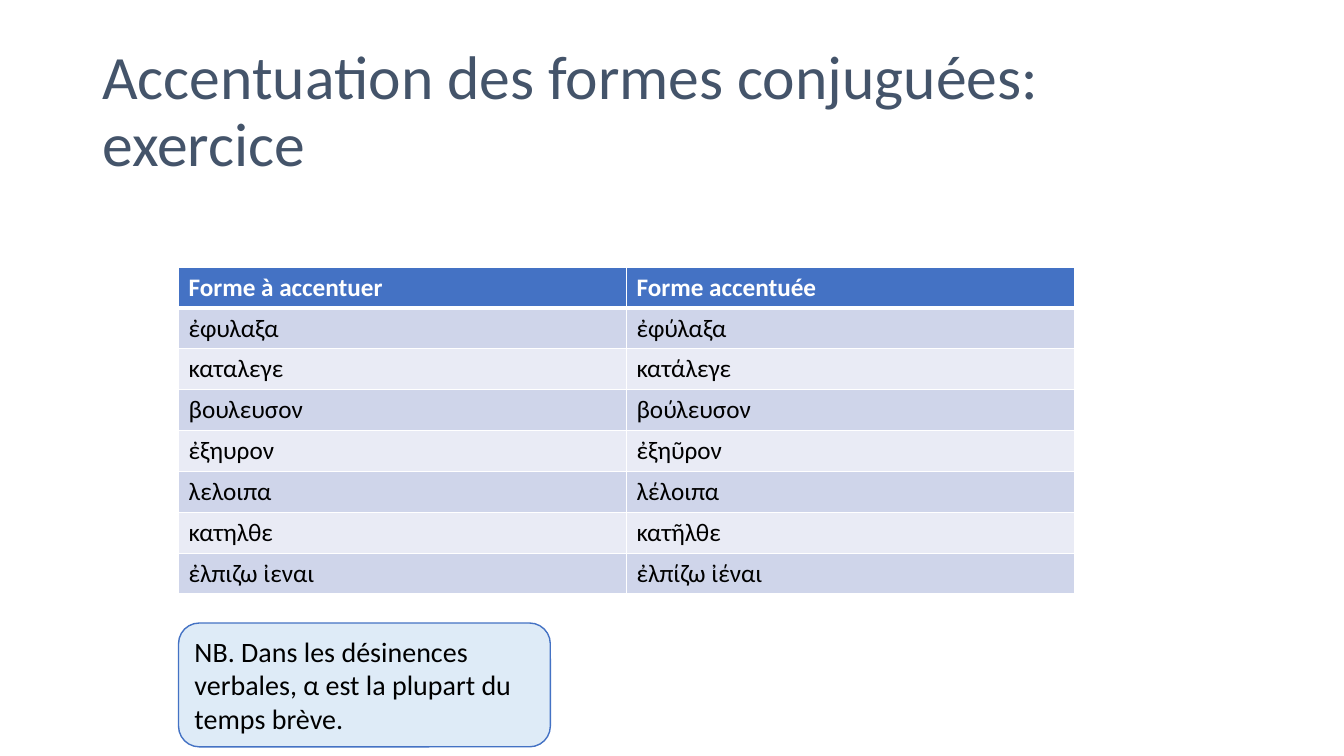
from lxml import etree
from pptx import Presentation
from pptx.dml.color import RGBColor
from pptx.enum import shapes, text
from pptx.oxml import ns
from pptx.util import Cm, Pt

FONT = "Calibri"
BLUE = "4472C4"
WHITE = "FFFFFF"
BLACK = "000000"
BANDS = ("CFD5EA", "E9EBF5")
TABLE_LEFT = Cm(4.5)

FORMS = [
    ("Forme à accentuer", "Forme accentuée"),
    ("ἐφυλαξα", "ἐφύλαξα"),
    ("καταλεγε", "κατάλεγε"),
    ("βουλευσον", "βούλευσον"),
    ("ἐξηυρον", "ἐξηῦρον"),
    ("λελοιπα", "λέλοιπα"),
    ("κατηλθε", "κατῆλθε"),
    ("ἐλπιζω ἰεναι", "ἐλπίζω ἰέναι"),
]


def rgb(color):
    return RGBColor.from_string(color)


def add_run(p, words, size, color, bold=False):
    r = p.add_run()
    r.text = words
    r.font.name = FONT
    r.font.size = Pt(size)
    r.font.bold = bold
    r.font.color.rgb = rgb(color)


def set_border(cell, side, width):
    tc_pr = cell._tc.get_or_add_tcPr()
    ln = etree.SubElement(tc_pr, ns.qn(f"a:ln{side}"), w=str(Pt(width)))
    fill = etree.SubElement(ln, ns.qn("a:solidFill"))
    etree.SubElement(fill, ns.qn("a:srgbClr"), val=WHITE)


def add_title(s, words):
    sp = s.shapes.add_textbox(Cm(2.33), Cm(1.01), Cm(29.21), Cm(3.68))
    tf = sp.text_frame
    tf.word_wrap = True
    tf.vertical_anchor = text.MSO_ANCHOR.MIDDLE
    p = tf.paragraphs[0]
    p.line_spacing = 0.9
    add_run(p, words, 44, "44546A")


def add_forms_table(s, rows):
    row_height = Cm(1.03)
    table = s.shapes.add_table(len(rows), 2, TABLE_LEFT, Cm(6.73),
                               Cm(22.58), row_height * len(rows)).table
    for i, row in enumerate(rows):
        table.rows[i].height = row_height
        header = i == 0
        for j, words in enumerate(row):
            cell = table.cell(i, j)
            set_border(cell, "L", 1)
            set_border(cell, "R", 1)
            set_border(cell, "T", 3 if i == 1 else 1)
            set_border(cell, "B", 3 if header else 1)
            cell.fill.solid()
            cell.fill.fore_color.rgb = rgb(BLUE if header else BANDS[(i - 1) % 2])
            add_run(cell.text_frame.paragraphs[0], words, 18,
                    WHITE if header else BLACK, header)


def add_note(s, words):
    sp = s.shapes.add_shape(shapes.MSO_SHAPE.ROUNDED_RECTANGLE,
                            TABLE_LEFT, Cm(15.7), Cm(9.37), Cm(3.12))
    sp.shadow.inherit = False
    sp.fill.solid()
    sp.fill.fore_color.rgb = rgb("DEEBF7")
    sp.line.color.rgb = rgb(BLUE)
    sp.line.width = Pt(1)
    tf = sp.text_frame
    tf.word_wrap = True
    tf.vertical_anchor = text.MSO_ANCHOR.TOP
    tf.auto_size = text.MSO_AUTO_SIZE.SHAPE_TO_FIT_TEXT
    p = tf.paragraphs[0]
    p.alignment = text.PP_ALIGN.LEFT
    add_run(p, words, 20, BLACK)


def main():
    prs = Presentation()
    prs.slide_width = Cm(33.87)
    prs.slide_height = Cm(19.05)
    s = prs.slides.add_slide(prs.slide_layouts[6])
    add_title(s, "Accentuation des formes conjuguées: exercice")
    add_forms_table(s, FORMS)
    add_note(s, "NB. Dans les désinences verbales, α est la plupart du temps brève.")
    prs.save("out.pptx")


if __name__ == "__main__":
    main()
